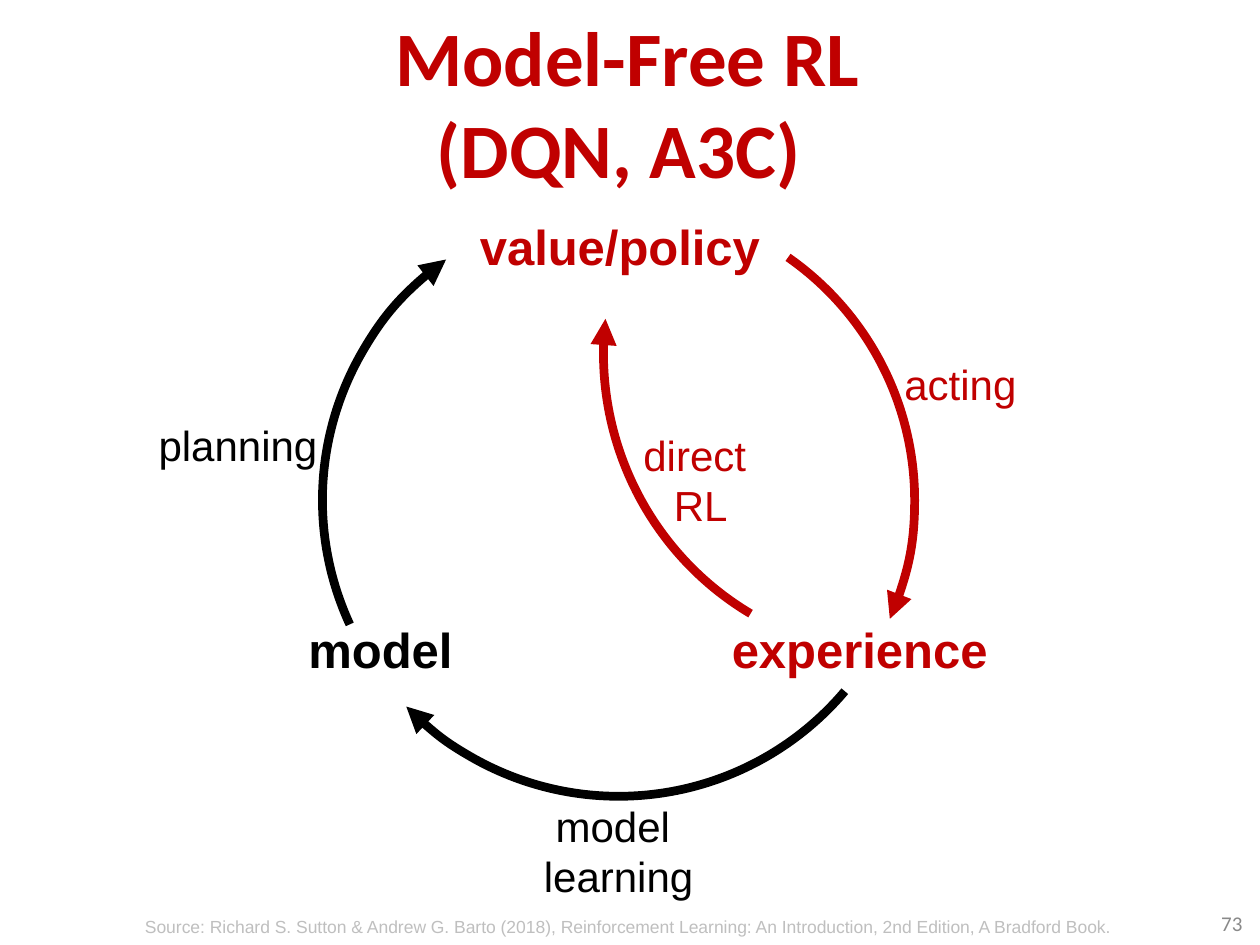
import pptx
import pptx.dml.color
import pptx.enum.shapes
import pptx.enum.text
import pptx.oxml
import pptx.oxml.ns
import pptx.util
from pptx.util import Inches

RED = "C00000"
BLACK = "000000"
ALIGN = pptx.enum.text.PP_ALIGN
ANCHOR = pptx.enum.text.MSO_ANCHOR
AUTO_SIZE = pptx.enum.text.MSO_AUTO_SIZE


def rgb(value):
    """Turn a hex string into a colour."""
    return pptx.dml.color.RGBColor.from_string(value)


def add_text(slide, text, left, top, width, height, size=24, color=BLACK, bold=False,
             font="Arial", align=ALIGN.LEFT, anchor=ANCHOR.TOP, wrap=False, grow=True):
    """Add one paragraph of text in a box given in inches."""
    box = slide.shapes.add_textbox(Inches(left), Inches(top), Inches(width), Inches(height))
    frame = box.text_frame
    frame.word_wrap = wrap
    frame.auto_size = AUTO_SIZE.SHAPE_TO_FIT_TEXT if grow else AUTO_SIZE.NONE
    frame.vertical_anchor = anchor
    paragraph = frame.paragraphs[0]
    paragraph.text = text
    paragraph.alignment = align
    for run in paragraph.runs:
        run.font.name = font
        run.font.size = pptx.util.Pt(size)
        run.font.bold = bold
        run.font.color.rgb = rgb(color)


def add_arc_arrow(slide, circle, start, end, color):
    """Add an arc of a circle, clockwise between two degrees, with an arrowhead at its end."""
    arc = slide.shapes.add_shape(pptx.enum.shapes.MSO_SHAPE.ARC, *map(Inches, circle))
    for index, degrees in enumerate((start, end)):
        arc.adjustments[index] = degrees * 60000 / 100000
    arc.shadow.inherit = False
    arc.fill.background()
    arc.line.color.rgb = rgb(color)
    arc.line.width = pptx.util.Pt(5)
    line = arc.line._get_or_add_ln()
    line.append(pptx.oxml.parse_xml(
        f'<a:tailEnd {pptx.oxml.ns.nsdecls("a")} type="triangle"/>'))


def add_cycle(slide):
    """Draw the arrows of the learning cycle with their stages and labels."""
    stages = [
        ("value/policy", 3.71, 1.67, 2.45, RED),
        ("experience", 5.71, 4.87, 2.26, RED),
        ("model", 2.35, 4.87, 1.36, BLACK),
    ]
    for stage, left, top, width, color in stages:
        add_text(slide, stage, left, top, width, 0.57, size=28, color=color, bold=True)

    cycle = (2.56, 1.62, 4.7, 4.7)
    shortcut = (4.79, 0.41, 4.73, 4.79)
    arrows = [
        (cycle, 304.92, 23.63, RED),
        (cycle, 40.18, 135.81, BLACK),
        (cycle, 155.19, 234.37, BLACK),
        (shortcut, 120.11, 186.66, RED),
    ]
    for circle, start, end, color in arrows:
        add_arc_arrow(slide, circle, start, end, color)

    add_text(slide, "planning", 1.16, 3.28, 1.48, 0.5)
    add_text(slide, "acting", 7.08, 2.8, 1.1, 0.5, color=RED)
    add_text(slide, "model \nlearning", 4.21, 6.3, 1.4, 0.91, align=ALIGN.CENTER)
    add_text(slide, "direct \nRL", 5, 3.36, 1.12, 0.91, color=RED, align=ALIGN.CENTER)


def main():
    """Build the slide and save it."""
    deck = pptx.Presentation()
    deck.slide_width = Inches(10)
    deck.slide_height = Inches(7.5)
    slide = deck.slides.add_slide(deck.slide_layouts[6])
    add_text(slide, "Model-Free RL\n(DQN, A3C) ", 0.48, 0.13, 9, 1.36, size=44, color=RED,
             bold=True, font="Calibri", align=ALIGN.CENTER, anchor=ANCHOR.MIDDLE,
             wrap=True, grow=False)
    add_text(slide, "73", 7.63, 7.13, 2.33, 0.4, size=12, color="898989", font="Calibri",
             align=ALIGN.RIGHT, anchor=ANCHOR.MIDDLE, wrap=True, grow=False)
    add_text(slide, "Source: Richard S. Sutton & Andrew G. Barto (2018), Reinforcement Learning: "
             "An Introduction, 2nd Edition, A Bradford Book.", 0.48, 7.22, 9, 0.27, size=10,
             color="BFBFBF", align=ALIGN.CENTER, wrap=True)
    add_cycle(slide)
    deck.save("out.pptx")


if __name__ == "__main__":
    main()
